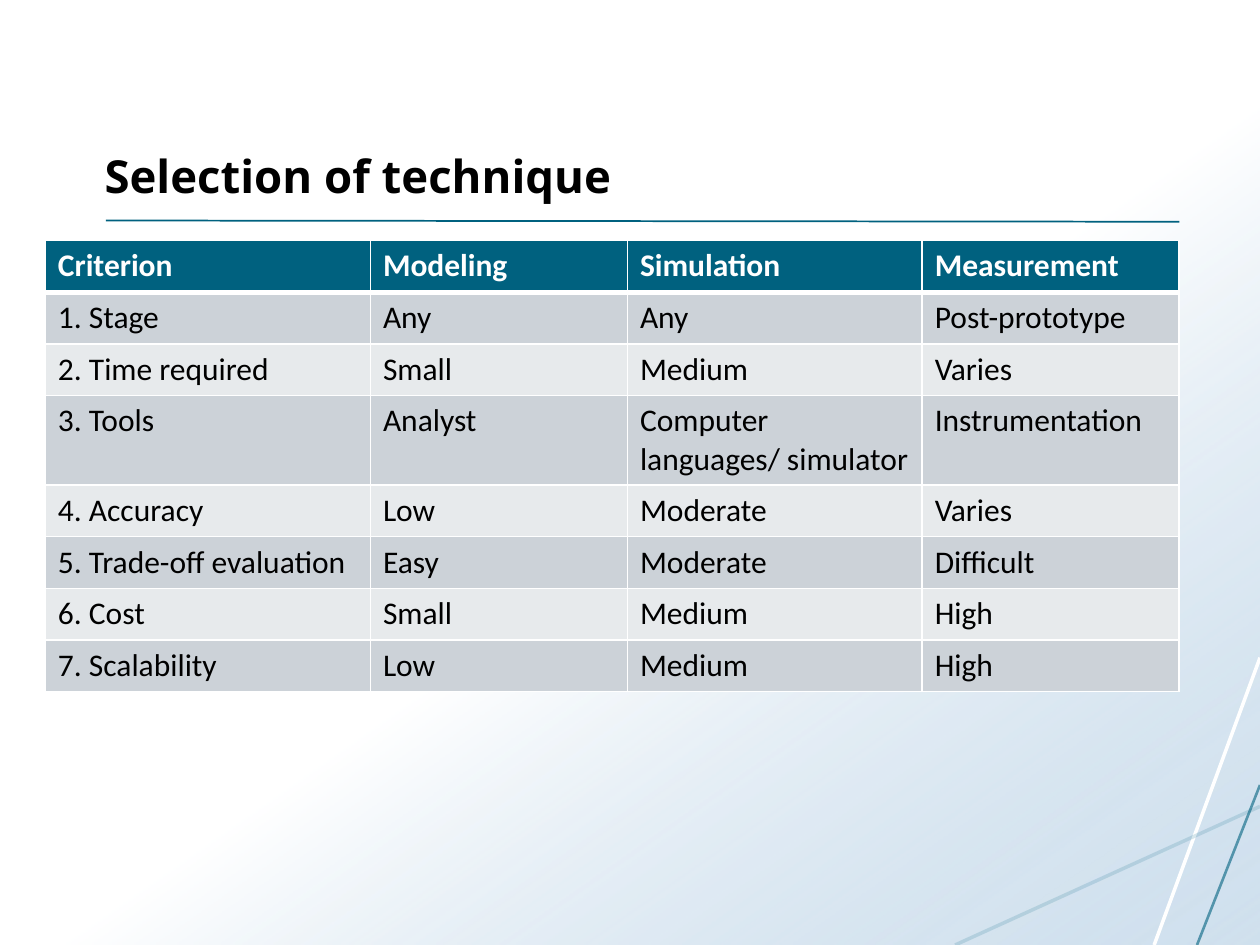
from lxml import etree
from pptx import Presentation
from pptx.dml.color import RGBColor
from pptx.enum.shapes import MSO_CONNECTOR, MSO_SHAPE
from pptx.enum.text import MSO_ANCHOR, PP_ALIGN
from pptx.oxml.ns import qn
from pptx.util import Inches, Pt

STRAIGHT = MSO_CONNECTOR.STRAIGHT
RECTANGLE = MSO_SHAPE.RECTANGLE
BOTTOM = MSO_ANCHOR.BOTTOM
LEFT = PP_ALIGN.LEFT

TEAL, WHITE, BLACK = "00617F", "FFFFFF", "000000"
BANDS = ("CCD2D8", "E7EAEC")
COLUMN_WIDTHS = (2.58, 2.04, 2.34, 2.04)
ROW_HEIGHT = 0.41
CRITERIA = [
    ("Criterion", "Modeling", "Simulation", "Measurement"),
    (" Stage", "Any", "Any", "Post-prototype"),
    ("2. Time required", "Small", "Medium", "Varies"),
    ("3. Tools", "Analyst", "Computer languages/ simulator", "Instrumentation"),
    ("4. Accuracy", "Low", "Moderate", "Varies"),
    ("5. Trade-off evaluation", "Easy", "Moderate", "Difficult"),
    ("6. Cost", "Small", "Medium", "High"),
    ("7. Scalability", "Low", "Medium", "High"),
]
ACCENT_LINES = [
    (10, 5.22, 9.16, 7.5, WHITE, 2, 100),
    (10, 6.4, 7.58, 7.5, "15718F", 2, 16),
    (10, 6.23, 9.5, 7.5, TEAL, 1.5, 60),
    (0.84, 1.75, 9.36, 1.76, TEAL, 1, 100),
]


def rgb(value):
    """Turn a hex string into a colour."""
    return RGBColor.from_string(value)


def set_opacity(parent, percent):
    """Give the last RGB colour inside an element an opacity."""
    colour = list(parent.iter(qn("a:srgbClr")))[-1]
    etree.SubElement(colour, qn("a:alpha"), val=str(percent * 1000))


def add_run(paragraph, text, font_name, size, colour, bold):
    """Add one formatted run to a paragraph."""
    run = paragraph.add_run()
    run.text = text
    run.font.name = font_name
    run.font.size = Pt(size)
    run.font.bold = bold
    run.font.color.rgb = rgb(colour)


def add_backdrop(slide, left, top, width, height):
    """Fill the box with a diagonal white to pale blue gradient."""
    backdrop = slide.shapes.add_shape(RECTANGLE, left, top, width, height)
    backdrop.shadow.inherit = False
    backdrop.line.fill.background()
    backdrop.fill.gradient()
    backdrop.fill.gradient_angle = 305
    stops = backdrop.fill.gradient_stops
    for stop, position, colour in zip(stops, (0.54, 1), (WHITE, "A9C7E0")):
        stop.position = position
        stop.color.rgb = rgb(colour)
    set_opacity(backdrop.element.spPr, 54)


def add_accent_line(slide, x1, y1, x2, y2, colour, width, opacity):
    """Draw one straight decorative line."""
    accent = slide.shapes.add_connector(
        STRAIGHT, Inches(x1), Inches(y1), Inches(x2), Inches(y2))
    accent.line.color.rgb = rgb(colour)
    accent.line.width = Pt(width)
    if opacity < 100:
        set_opacity(accent.element.spPr, opacity)
    etree.SubElement(accent.element.spPr, qn("a:effectLst"))


def place_title(slide, left, top, width, height):
    """Move the title placeholder in front and write the heading."""
    title = slide.shapes.title
    title.element.getparent().append(title.element)
    title.left, title.top, title.width, title.height = left, top, width, height
    title.text_frame.vertical_anchor = BOTTOM
    heading = title.text_frame.paragraphs[0]
    heading.alignment = LEFT
    add_run(heading, "Selection of technique", "Open Sans", 26, BLACK, True)


def set_borders(cell, bottom_width):
    """Put white borders round a cell, before its fill."""
    properties = cell._tc.get_or_add_tcPr()
    for side, width in (("L", 1), ("R", 1), ("T", 1), ("B", bottom_width)):
        border = etree.SubElement(properties, qn(f"a:ln{side}"), w=str(Pt(width)))
        fill = etree.SubElement(border, qn("a:solidFill"))
        etree.SubElement(fill, qn("a:srgbClr"), val=WHITE)


def add_criteria_table(slide, left, top, width, height):
    """Build the table comparing the three techniques."""
    table = slide.shapes.add_table(
        len(CRITERIA), len(COLUMN_WIDTHS), left, top, width, height).table
    for column, column_width in zip(table.columns, COLUMN_WIDTHS):
        column.width = Inches(column_width)
    for r, values in enumerate(CRITERIA):
        table.rows[r].height = Inches(ROW_HEIGHT)
        header = r == 0
        for c, value in enumerate(values):
            cell = table.cell(r, c)
            set_borders(cell, 3 if header else 1)
            cell.fill.solid()
            cell.fill.fore_color.rgb = rgb(TEAL if header else BANDS[(r - 1) % 2])
            add_run(cell.text_frame.paragraphs[0], value, "Calibri", 18,
                    WHITE if header else BLACK, header)
    stage = table.cell(1, 0).text_frame.paragraphs[0]
    etree.SubElement(stage._p.get_or_add_pPr(), qn("a:buAutoNum"), type="arabicPeriod")


def main():
    """Build and save the slide."""
    presentation = Presentation()
    presentation.slide_width = Inches(10)
    presentation.slide_height = Inches(7.5)
    slide = presentation.slides.add_slide(presentation.slide_layouts[5])
    add_backdrop(slide, 0, 0, Inches(10), Inches(7.5))
    for accent in ACCENT_LINES:
        add_accent_line(slide, *accent)
    place_title(slide, Inches(0.73), Inches(0.33), Inches(8.62), Inches(1.33))
    add_criteria_table(slide, Inches(0.36), Inches(1.91), Inches(9),
                       Inches(ROW_HEIGHT * len(CRITERIA)))
    presentation.save("out.pptx")


if __name__ == "__main__":
    main()
